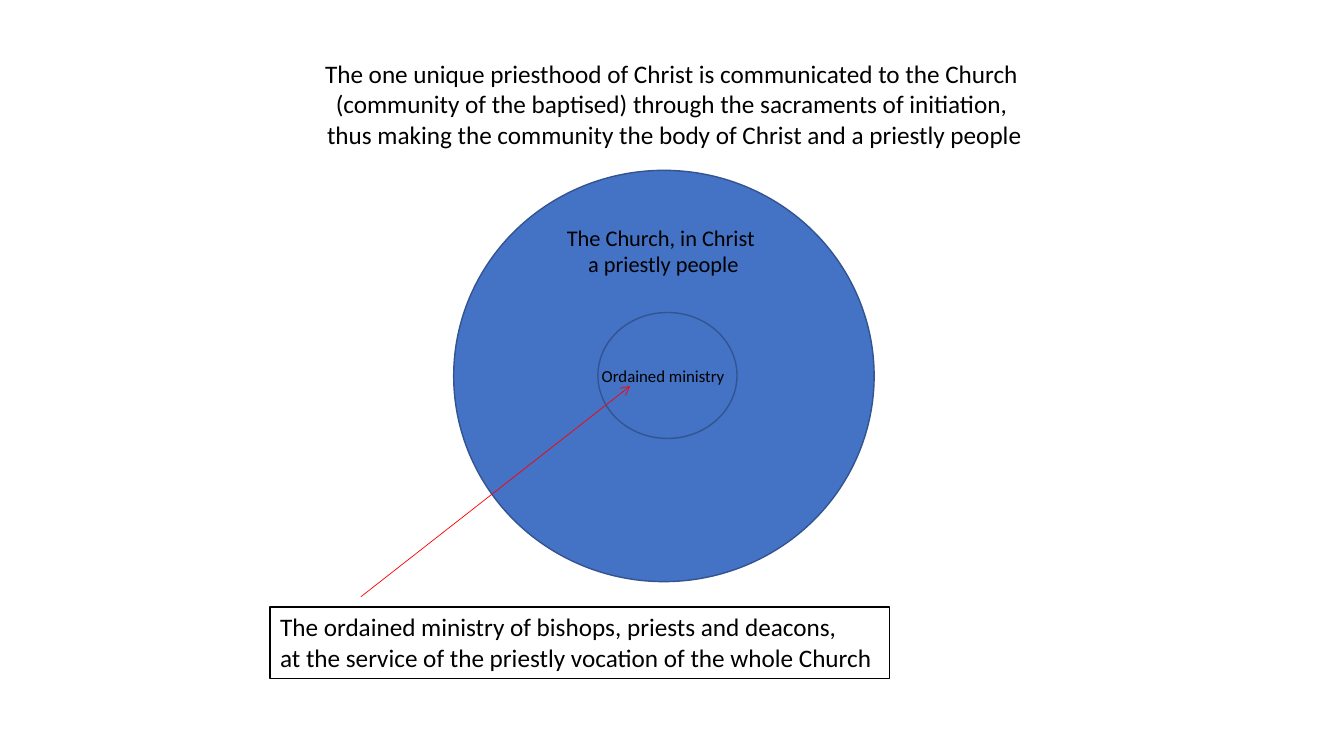
"""Build a slide on the priestly people and the ordained ministry."""
from dataclasses import dataclass

from lxml import etree
from pptx import Presentation
from pptx.dml.color import RGBColor
from pptx.enum.shapes import MSO_CONNECTOR, MSO_SHAPE
from pptx.enum.text import MSO_ANCHOR, MSO_AUTO_SIZE, PP_ALIGN
from pptx.oxml.ns import qn
from pptx.util import Inches, Pt

OVAL = MSO_SHAPE.OVAL
STRAIGHT = MSO_CONNECTOR.STRAIGHT
TOP = MSO_ANCHOR.TOP
FIT = MSO_AUTO_SIZE.SHAPE_TO_FIT_TEXT
LEFT, CENTER = PP_ALIGN.LEFT, PP_ALIGN.CENTER
FONT = "Calibri"
COLORS = {"blue": "4472C4", "edge": "325491", "black": "000000", "red": "FF0000"}


@dataclass
class Box:
    """Place of an element, in inches."""
    left: float
    top: float
    width: float
    height: float

    def area(self) -> list:
        """Return the place as lengths."""
        return [Inches(n) for n in (self.left, self.top, self.width, self.height)]


@dataclass
class Label:
    """Text with its place and format."""
    box: Box
    lines: list[str]
    size: int
    align: PP_ALIGN = LEFT
    border: bool = False


CIRCLES = [Box(4.5, 1.69, 4.17, 4.08), Box(5.93, 3.1, 1.38, 1.25)]
TITLE = Label(Box(3.08, 0.53, 7.22, 1.01), [
    "The one unique priesthood of Christ is communicated to the Church ",
    "(community of the baptised) through the sacraments of initiation, ",
    "thus making the community the body of Christ and a priestly people",
], 18, CENTER)
LABELS = [
    Label(Box(5.51, 2.17, 2.14, 0.64),
          ["The Church, in Christ ", "a priestly people"], 16, CENTER),
    Label(Box(2.68, 6.02, 6.14, 0.71), [
        "The ordained ministry of bishops, priests and deacons,",
        "at the service of the priestly vocation of the whole Church",
    ], 18, border=True),
    Label(Box(5.87, 3.58, 1.43, 0.3), ["Ordained ministry"], 12),
]


def color(name: str) -> RGBColor:
    """Return a named colour."""
    return RGBColor.from_string(COLORS[name])


def stroke(line, name: str, width: float) -> None:
    """Set the colour and width of a line."""
    line.color.rgb = color(name)
    line.width = Pt(width)


def write(frame, lines: list[str], *, size: int, align: PP_ALIGN) -> None:
    """Write one paragraph for each line of text."""
    frame.word_wrap = False
    frame.auto_size = FIT
    frame.vertical_anchor = TOP
    frame.text = "\n".join(lines)
    for para in frame.paragraphs:
        para.alignment = align
        para.font.name = FONT
        para.font.size = Pt(size)
        para.font.color.rgb = color("black")


def add_oval(slide, box: Box) -> None:
    """Draw a blue circle."""
    oval = slide.shapes.add_shape(OVAL, *box.area())
    oval.shadow.inherit = False
    oval.fill.solid()
    oval.fill.fore_color.rgb = color("blue")
    stroke(oval.line, "edge", 1)


def add_title(slide, label: Label) -> None:
    """Move and fill the title."""
    title = slide.shapes.title
    title.left, title.top, title.width, title.height = label.box.area()
    write(title.text_frame, label.lines, size=label.size, align=label.align)


def add_label(slide, label: Label) -> None:
    """Draw a text box, framed if asked."""
    shape = slide.shapes.add_textbox(*label.box.area())
    write(shape.text_frame, label.lines, size=label.size, align=label.align)
    if label.border:
        stroke(shape.line, "black", 1)


def add_arrow(slide, start: tuple[float, float], end: tuple[float, float]) -> None:
    """Draw a thin red arrow."""
    ends = [Inches(n) for n in (*start, *end)]
    arrow = slide.shapes.add_connector(STRAIGHT, *ends)
    stroke(arrow.line, "red", 0.5)
    props = arrow.element.spPr
    etree.SubElement(props.find(qn("a:ln")), qn("a:tailEnd"), type="arrow")
    etree.SubElement(props, qn("a:effectLst"))


def main() -> None:
    """Build and save the slide."""
    deck = Presentation()
    deck.slide_width, deck.slide_height = Inches(13.33), Inches(7.5)
    slide = deck.slides.add_slide(deck.slide_layouts.get_by_name("Title Only"))
    add_title(slide, TITLE)
    for box in CIRCLES:
        add_oval(slide, box)
    add_arrow(slide, (3.58, 5.92), (6.25, 3.83))
    for label in LABELS:
        add_label(slide, label)
    deck.save("out.pptx")


if __name__ == "__main__":
    main()
